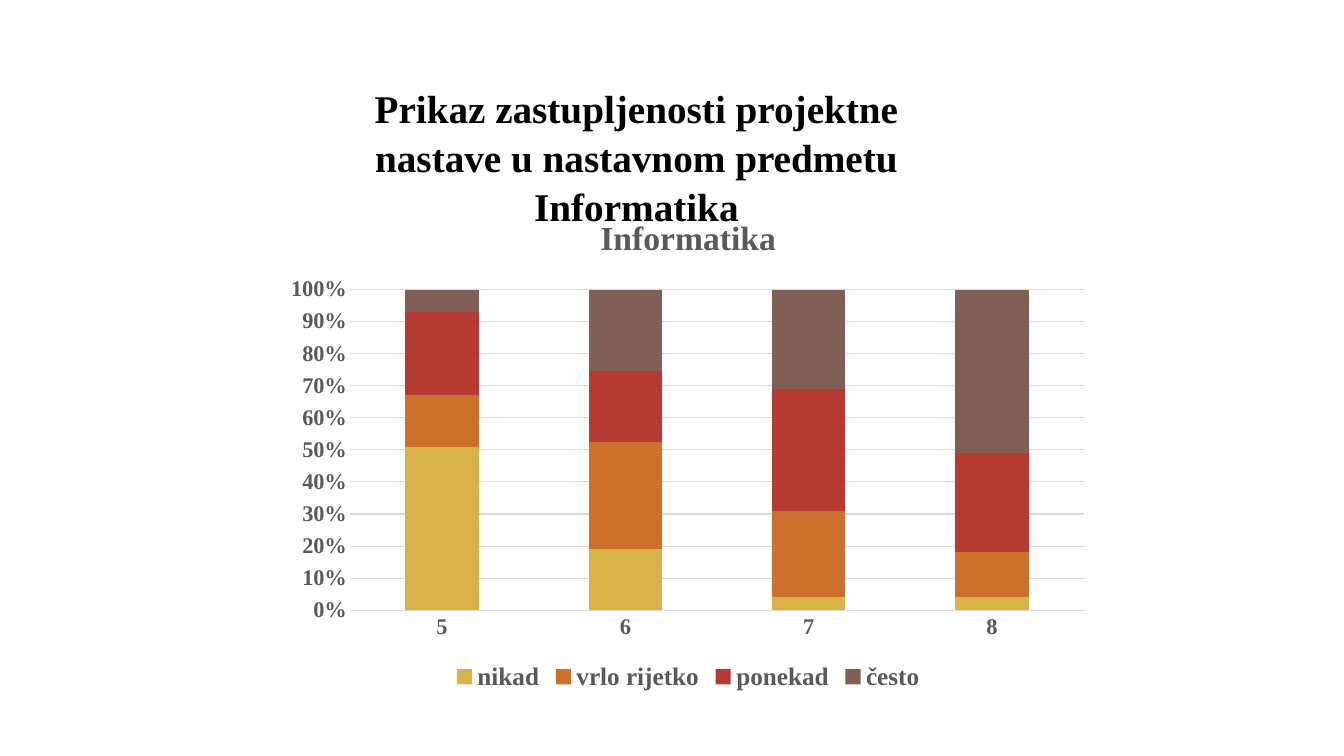
from lxml import etree
from pptx import Presentation
from pptx.chart.data import CategoryChartData
from pptx.dml.color import RGBColor
from pptx.enum.chart import XL_CHART_TYPE, XL_LEGEND_POSITION, XL_TICK_MARK
from pptx.enum.text import MSO_ANCHOR, MSO_AUTO_SIZE, PP_ALIGN
from pptx.oxml.ns import qn
from pptx.util import Inches, Pt

STACKED = XL_CHART_TYPE.COLUMN_STACKED_100
BOTTOM = XL_LEGEND_POSITION.BOTTOM
NO_TICK = XL_TICK_MARK.NONE
TOP = MSO_ANCHOR.TOP
FIXED = MSO_AUTO_SIZE.NONE
CENTER = PP_ALIGN.CENTER

BLACK = RGBColor(0x00, 0x00, 0x00)
GRAY = RGBColor(0x59, 0x59, 0x59)
LIGHT = RGBColor(0xD9, 0xD9, 0xD9)
GOLD = RGBColor(0xD9, 0xB2, 0x47)
ORANGE = RGBColor(0xCC, 0x70, 0x2D)
RED = RGBColor(0xB5, 0x3A, 0x31)
BROWN = RGBColor(0x81, 0x5F, 0x56)

GRADES = ["5", "6", "7", "8"]
ANSWERS = [
    ("nikad", [51, 19, 4, 4], GOLD),
    ("vrlo rijetko", [16, 33, 27, 14], ORANGE),
    ("ponekad", [26, 22, 38, 31], RED),
    ("često", [7, 25, 31, 51], BROWN),
]


class Page:
    face = "Times New Roman"
    wide = Inches(13.33)
    high = Inches(7.5)

    def __init__(self, deck):
        deck.slide_width, deck.slide_height = self.wide, self.high
        self.slide = deck.slides.add_slide(deck.slide_layouts[5])

    def place(self, left, top, width, height):
        return (int(left * self.wide), int(top * self.high),
                int(width * self.wide), int(height * self.high))

    def style(self, font, size, color):
        font.name, font.size, font.bold = self.face, Pt(size), True
        font.color.rgb = color

    def rule(self, line):
        line.color.rgb = LIGHT
        line.width = Pt(0.75)

    def title(self, text, box):
        shape = self.slide.shapes.title
        shape.left, shape.top, shape.width, shape.height = self.place(*box)
        frame = shape.text_frame
        frame.text = text
        frame.word_wrap = True
        frame.auto_size = FIXED
        frame.vertical_anchor = TOP
        frame.margin_left = frame.margin_right = Inches(0.3)
        para = frame.paragraphs[0]
        para.alignment = CENTER
        para.line_spacing = 1.04
        self.style(para.runs[0].font, 28, BLACK)

    def chart(self, head, box):
        data = CategoryChartData(number_format="0")
        data.categories = GRADES
        for name, values, color in ANSWERS:
            data.add_series(name, values)
        chart = self.slide.shapes.add_chart(STACKED, *self.place(*box), data).chart
        chart.font.name, chart.font.size = self.face, Pt(10)
        frame = chart.chart_title.text_frame
        frame.text = head
        self.style(frame.paragraphs[0].runs[0].font, 24, GRAY)
        chart.chart_title.include_in_layout = False
        chart.has_legend = True
        chart.legend.position = BOTTOM
        chart.legend.include_in_layout = False
        self.style(chart.legend.font, 18, GRAY)
        self.axes(chart)
        self.bars(chart.plots[0])
        self.frame(chart, x=0.09, y=0.19, w=0.89, h=0.64)

    def axes(self, chart):
        for axis in (chart.category_axis, chart.value_axis):
            axis.major_tick_mark = axis.minor_tick_mark = NO_TICK
            self.style(axis.tick_labels.font, 16, GRAY)
        self.rule(chart.category_axis.format.line)
        value = chart.value_axis
        value.format.line.fill.background()
        value.minimum_scale, value.maximum_scale, value.major_unit = 0, 1, 0.1
        value.tick_labels.number_format = "0%"
        value.tick_labels.number_format_is_linked = False
        self.rule(value.major_gridlines.format.line)

    def bars(self, plot):
        plot.gap_width, plot.overlap = 150, 100
        plot.vary_by_categories = False
        for bar, (name, values, color) in zip(plot.series, ANSWERS):
            bar.format.fill.solid()
            bar.format.fill.fore_color.rgb = color

    def frame(self, chart, **sides):
        area = chart.plots[0]._element.getparent()
        for old in area.findall(qn("c:layout")):
            area.remove(old)
        layout = etree.Element(qn("c:layout"))
        area.insert(0, layout)
        manual = etree.SubElement(layout, qn("c:manualLayout"))
        marks = {"layoutTarget": "inner", "xMode": "edge", "yMode": "edge", **sides}
        for tag, mark in marks.items():
            etree.SubElement(manual, qn("c:" + tag)).set("val", str(mark))


def main():
    deck = Presentation()
    page = Page(deck)
    page.chart("Informatika", (0.2055, 0.257, 0.613, 0.663))
    page.title("Prikaz zastupljenosti projektne nastave u nastavnom predmetu Informatika",
               (0.2235, 0.103, 0.5, 0.139))
    deck.save("out.pptx")


if __name__ == "__main__":
    main()
